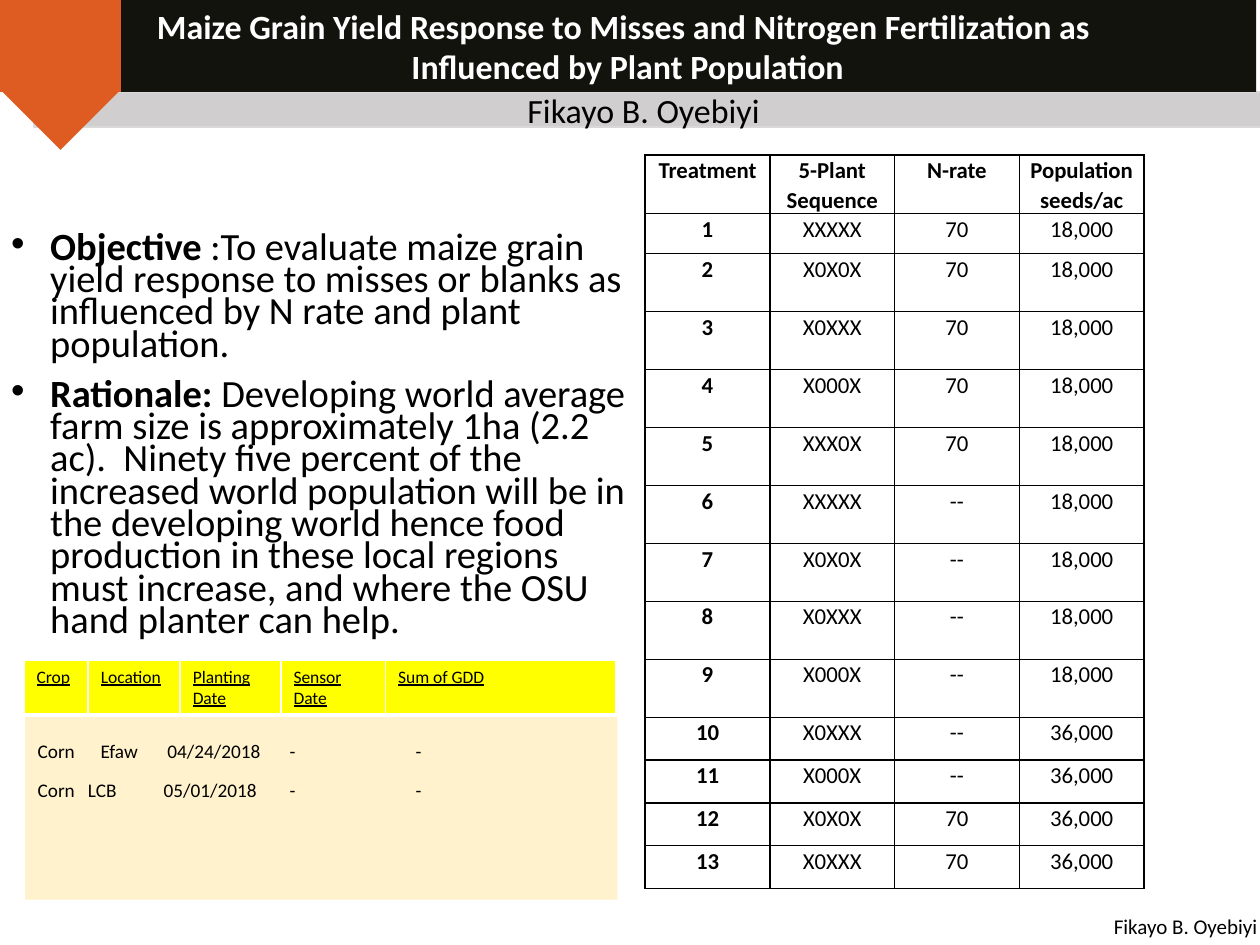
from lxml.etree import SubElement
from pptx import Presentation
from pptx.dml.color import RGBColor
from pptx.enum.shapes import MSO_SHAPE
from pptx.enum.text import MSO_ANCHOR, MSO_AUTO_SIZE, PP_ALIGN
from pptx.oxml.ns import qn
from pptx.util import Inches, Pt

THEME = {
    "font": "Calibri",
    "black": "000000", "white": "FFFFFF", "banner": "13130D", "orange": "DE5B21",
    "bar": "D0CECE", "bar_line": "D9D9D9", "cream": "FFF2CC", "yellow": "FFFF00",
    "title": 19.4, "body": 22, "cell": 13, "footer": 12, "crop": 11, "crop_head": 10,
}
AUTHOR = "Fikayo B. Oyebiyi"
TITLE = ["Maize Grain Yield Response to Misses and Nitrogen Fertilization as ",
         "Influenced by Plant Population"]
BODY = [
    [("Objective", True),
     (" :To evaluate maize grain yield response to misses or blanks as influenced "
      "by N rate and plant population.", False)],
    [("Rationale: ", True),
     ("Developing world average farm size is approximately 1ha (2.2 ac).  Ninety five "
      "percent of the increased world population will be in the developing world hence "
      "food production in these local regions must increase, and where the OSU hand "
      "planter can help.", False)],
]
CROP_HEAD = ["Crop", "Location", "Planting Date", "Sensor Date", "Sum of GDD"]
CROP_COLS = [0.51, 0.73, 0.8, 0.83, 1.83]
# Each trial line comes with its own tab stops.
CROP_ROWS = [
    (["Corn", "Efaw", "04/24/2018", "-", "-"], [0.5, 1.03, 2, 3]),
    (["Corn", "LCB", "05/01/2018", "-", "-"], [0.4, 1, 2, 3]),
]
TREATMENT_HEAD = ["Treatment", "5-Plant Sequence", "N-rate", "Population seeds/ac"]
TREATMENTS = [
    ("XXXXX", "70", "18,000"), ("X0X0X", "70", "18,000"), ("X0XXX", "70", "18,000"),
    ("X000X", "70", "18,000"), ("XXX0X", "70", "18,000"), ("XXXXX", "--", "18,000"),
    ("X0X0X", "--", "18,000"), ("X0XXX", "--", "18,000"), ("X000X", "--", "18,000"),
    ("X0XXX", "--", "36,000"), ("X000X", "--", "36,000"), ("X0X0X", "70", "36,000"),
    ("X0XXX", "70", "36,000"),
]
TREATMENT_ROWS = [0.46, 0.32] + [0.46] * 8 + [0.34] * 4


def rgb(name):
    return RGBColor.from_string(THEME[name])


def write(tf, paragraphs, size, color="black", bold=False, underline=None, align=None,
          spacing=None, before=0, bullet=None, tabs=()):
    """Fill a frame; a paragraph is a string or a list of (text, bold) runs."""
    for i, runs in enumerate(paragraphs):
        p = tf.add_paragraph() if i else tf.paragraphs[0]
        p.alignment = align
        if spacing:
            p.line_spacing = spacing
        if i and before:
            p.space_before = Pt(before)
        pPr = p._p.get_or_add_pPr()
        if bullet:
            pPr.set("marL", str(Inches(0.31)))
            pPr.set("indent", str(-Inches(0.31)))
            SubElement(pPr, qn("a:buFont"), typeface="Arial")
            SubElement(pPr, qn("a:buChar"), char=bullet)
        if tabs:
            stops = SubElement(pPr, qn("a:tabLst"))
            for stop in tabs[i]:
                SubElement(stops, qn("a:tab"), pos=str(Inches(stop)), algn="l")
        for text, heavy in [(runs, bold)] if isinstance(runs, str) else runs:
            r = p.add_run()
            r.text = text
            r.font.name, r.font.size = THEME["font"], Pt(THEME[size])
            r.font.bold, r.font.underline = heavy, underline
            r.font.color.rgb = rgb(color)


def add_block(shapes, box, fill, kind=MSO_SHAPE.RECTANGLE, line=None):
    sp = shapes.add_shape(kind, *map(Inches, box))
    sp.shadow.inherit = False
    sp.fill.solid()
    sp.fill.fore_color.rgb = rgb(fill)
    if line:
        sp.line.color.rgb, sp.line.width = rgb(line), Pt(1)
    else:
        sp.line.fill.background()
    sp.text_frame.word_wrap = True
    return sp


def add_text_frame(shapes, box):
    tf = shapes.add_textbox(*map(Inches, box)).text_frame
    tf.word_wrap = True
    return tf


def set_margins(owner, side, end):
    owner.margin_left = owner.margin_right = Inches(side)
    owner.margin_top = owner.margin_bottom = Inches(end)


def set_borders(cell, color, bottom=1):
    tcPr = cell._tc.get_or_add_tcPr()
    for i, (tag, width) in enumerate([("lnL", 1), ("lnR", 1), ("lnT", 1), ("lnB", bottom)]):
        ln = tcPr.makeelement(qn(f"a:{tag}"), {"w": str(Pt(width))})
        SubElement(SubElement(ln, qn("a:solidFill")), qn("a:srgbClr"), val=THEME[color])
        tcPr.insert(i, ln)


def add_grid(shapes, left, top, cols, rows, fill):
    """Add a plain filled table and return it."""
    table = shapes.add_table(len(rows), len(cols), Inches(left), Inches(top),
                             Inches(sum(cols)), Inches(sum(rows))).table
    table.first_row = table.horz_banding = False
    for col, width in zip(table.columns, cols):
        col.width = Inches(width)
    for row, height in zip(table.rows, rows):
        row.height = Inches(height)
    for cell in table.iter_cells():
        cell.fill.solid()
        cell.fill.fore_color.rgb = rgb(fill)
    return table


def add_header(shapes):
    group = shapes.add_group_shape().shapes
    tf = add_block(group, (0, 0, 9.97, 0.73), "banner").text_frame
    set_margins(tf, 0.02, 0.01)
    tf.vertical_anchor = MSO_ANCHOR.MIDDLE
    write(tf, TITLE, "title", color="white", bold=True, align=PP_ALIGN.CENTER)
    add_block(group, (0, 0, 0.96, 0.73), "orange")
    add_block(group, (0, 0.71, 0.96, 0.48), "orange", MSO_SHAPE.ISOSCELES_TRIANGLE).rotation = 180


def add_crop_table(shapes):
    table = add_grid(shapes, 0.19, 5.24, CROP_COLS, [0.42], "yellow")
    for cell, text in zip(table.iter_cells(), CROP_HEAD):
        write(cell.text_frame, [text], "crop_head", underline=True)
        set_borders(cell, "white", bottom=3)


def add_treatment_table(shapes):
    table = add_grid(shapes, 5.12, 1.23, [0.99] * 4, TREATMENT_ROWS, "white")
    rows = [TREATMENT_HEAD] + [(str(n), *row) for n, row in enumerate(TREATMENTS, 1)]
    for i, row in enumerate(rows):
        for j, text in enumerate(row):
            cell = table.cell(i, j)
            set_margins(cell, 0.07, 0)
            write(cell.text_frame, [text], "cell", bold=i == 0 or j == 0,
                  align=PP_ALIGN.CENTER, spacing=1.07)
            set_borders(cell, "black")


def main():
    prs = Presentation()
    prs.slide_width, prs.slide_height = Inches(10), Inches(7.5)
    shapes = prs.slides.add_slide(prs.slide_layouts[6]).shapes

    tf = add_block(shapes, (0.2, 5.53, 4.7, 1.61), "cream").text_frame
    tf.margin_top = Inches(0.36)
    tf.vertical_anchor = MSO_ANCHOR.TOP
    write(tf, ["\t".join(row) for row, _ in CROP_ROWS], "crop", align=PP_ALIGN.LEFT,
          spacing=0.9, before=10, tabs=[stops for _, stops in CROP_ROWS])

    tf = add_block(shapes, (0.27, 0.73, 9.74, 0.28), "bar", line="bar_line").text_frame
    tf.vertical_anchor = MSO_ANCHOR.MIDDLE
    write(tf, [AUTHOR + " "], "title", align=PP_ALIGN.CENTER)

    tf = add_text_frame(shapes, (-0.01, 1.21, 5.12, 3.27))
    tf.margin_top = Inches(0.65)
    write(tf, BODY, "body", spacing=0.7, before=10, bullet="•")

    tf = add_text_frame(shapes, (8.54, 7.2, 1.74, 0.3))
    tf.auto_size = MSO_AUTO_SIZE.SHAPE_TO_FIT_TEXT
    write(tf, [AUTHOR], "footer", align=PP_ALIGN.CENTER)

    add_header(shapes)
    add_crop_table(shapes)
    add_treatment_table(shapes)
    prs.save("out.pptx")


if __name__ == "__main__":
    main()
